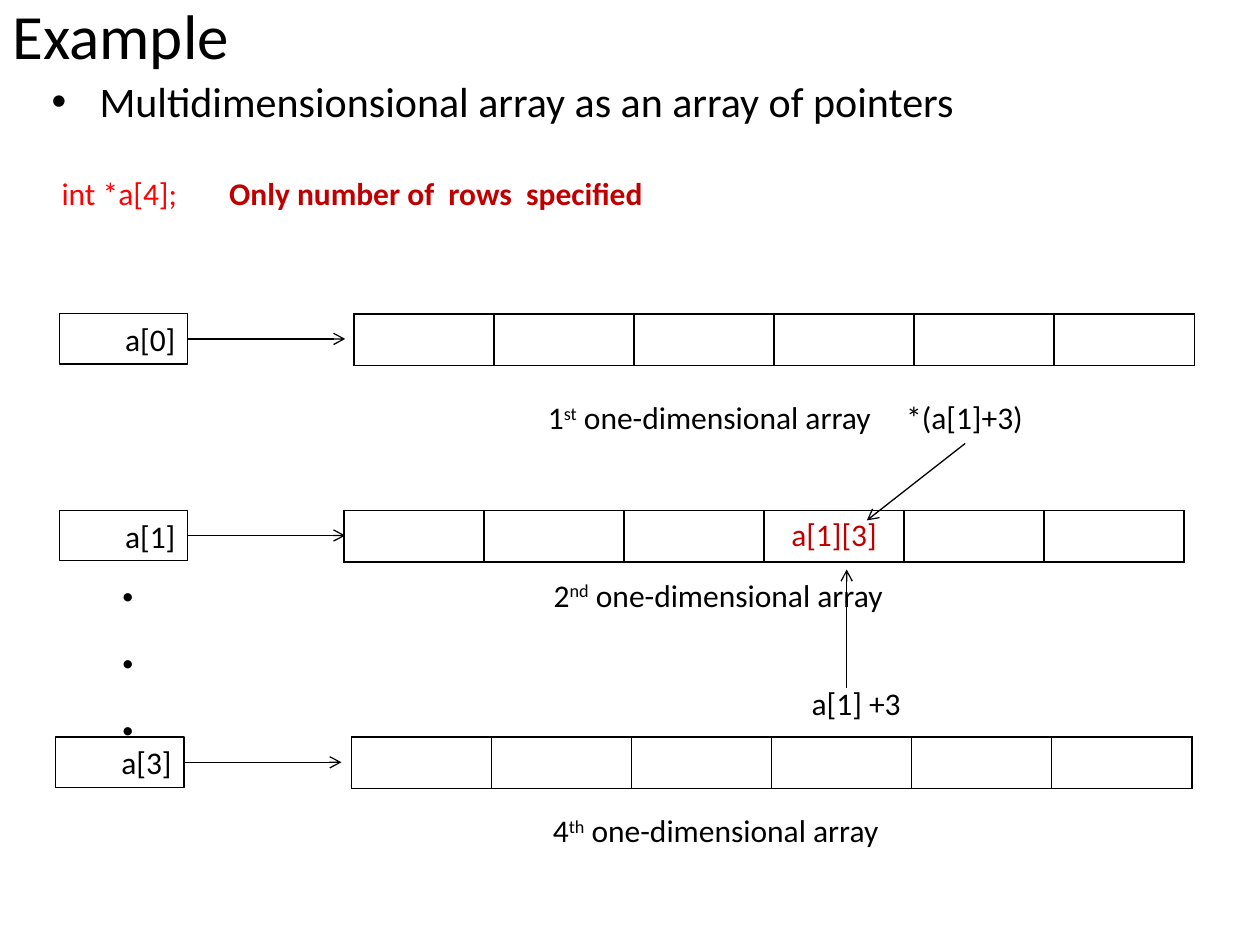
"""Build a slide showing a two-dimensional array as an array of pointers."""
from lxml.etree import SubElement
from pptx import Presentation
from pptx.dml.color import RGBColor
from pptx.enum.shapes import MSO_CONNECTOR, MSO_SHAPE
from pptx.enum.text import MSO_ANCHOR, MSO_AUTO_SIZE, PP_ALIGN
from pptx.oxml.ns import qn
from pptx.util import Inches, Pt

BLACK = RGBColor(0, 0, 0)
RED = RGBColor(0xFF, 0, 0)
DARK_RED = RGBColor(0xC0, 0, 0)

TITLE = "Example"
BULLET = "Multidimensionsional array as an array of pointers"
COLUMNS, TABLE_WIDTH, ROW_HEIGHT = 6, 6.67, 0.41
BOX_WIDTH, BOX_HEIGHT, ARROW_LENGTH = 1.02, 0.4, 1.25
CAPTION_WIDTH = 4.22

ARRAYS = [
    dict(name="a[0]", top=2.49, box_left=0.47, table_left=2.81, cells={},
         ordinal=("1", "st"), caption=(3.52, 3.11)),
    dict(name="a[1]", top=4.05, box_left=0.47, table_left=2.73, cells={3: "a[1][3]"},
         ordinal=("2", "nd"), caption=(3.59, 4.52)),
    dict(name="a[3]", top=5.85, box_left=0.44, table_left=2.79, cells={},
         ordinal=("4", "th"), caption=(3.57, 6.39)),
]
LABELS = [
    (["."] * 3, (0.78, 4.28, 0.47, 1.72), dict(size=32, bold=True, align=PP_ALIGN.CENTER)),
    (["a[1] +3"], (6.09, 5.38, 1.41, 0.4), dict(align=PP_ALIGN.CENTER)),
    (["*(a[1]+3)"], (6.95, 3.11, 1.41, 0.4), dict(align=PP_ALIGN.CENTER)),
    (["int *a[4];"], (0.39, 1.33, 1.13, 0.4), dict(color=RED, wrap=False)),
    (["Only number of  rows  specified"], (1.72, 1.33, 6.95, 0.4),
     dict(color=DARK_RED, bold=True)),
]
POINTERS = [((6.72, 5.46), (6.72, 4.52)), ((7.66, 3.52), (6.88, 4.13))]


def write(frame, paragraphs, size=18, color=BLACK, bold=False, align=PP_ALIGN.LEFT,
          wrap=True, fit=MSO_AUTO_SIZE.SHAPE_TO_FIT_TEXT):
    """Fill a frame; in a tuple paragraph every second span is superscript."""
    frame.word_wrap = wrap
    if fit is not None:
        frame.auto_size = fit
    for index, content in enumerate(paragraphs):
        para = frame.paragraphs[0] if index == 0 else frame.add_paragraph()
        para.alignment = align
        spans = content if isinstance(content, tuple) else (content,)
        for position, text in enumerate(spans):
            span = para.add_run()
            span.text = text
            span.font.name = "Calibri"
            span.font.size = Pt(size)
            span.font.bold = bold
            span.font.color.rgb = color
            if position % 2:
                span.font._element.set("baseline", "30000")


def place(shape, left, top, width, height):
    shape.left, shape.top = Inches(left), Inches(top)
    shape.width, shape.height = Inches(width), Inches(height)


def add_label(page, paragraphs, area, **style):
    box = page.shapes.add_textbox(*map(Inches, area))
    write(box.text_frame, paragraphs, **style)


def add_arrow(page, start, end):
    arrow = page.shapes.add_connector(MSO_CONNECTOR.STRAIGHT, *map(Inches, start + end))
    arrow.line.color.rgb = BLACK
    arrow.line.width = Pt(0.75)
    SubElement(arrow.line._get_or_add_ln(), qn("a:tailEnd"), type="arrow")
    SubElement(arrow._element.spPr, qn("a:effectLst"))
    return arrow


def add_borders(cell):
    properties = cell._tc.get_or_add_tcPr()
    for index, side in enumerate(("lnL", "lnR", "lnT", "lnB")):
        line = properties.makeelement(qn(f"a:{side}"), {"w": str(Pt(1))})
        fill = SubElement(line, qn("a:solidFill"))
        SubElement(fill, qn("a:srgbClr"), val=str(BLACK))
        properties.insert(index, line)


def add_row(page, left, top, texts):
    area = map(Inches, (left, top, TABLE_WIDTH, ROW_HEIGHT))
    table = page.shapes.add_table(1, COLUMNS, *area).table
    table.first_row = table.horz_banding = False
    for column in range(COLUMNS):
        cell = table.cell(0, column)
        cell.fill.background()
        add_borders(cell)
        if column in texts:
            write(cell.text_frame, [texts[column]], color=DARK_RED,
                  align=PP_ALIGN.CENTER, fit=None)


def add_array(page, name, top, box_left, table_left, cells, ordinal, caption):
    add_row(page, table_left, top, cells)
    area = map(Inches, (box_left, top, BOX_WIDTH, BOX_HEIGHT))
    box = page.shapes.add_shape(MSO_SHAPE.RECTANGLE, *area)
    box.shadow.inherit = False
    box.fill.background()
    box.line.color.rgb = BLACK
    box.line.width = Pt(0.75)
    write(box.text_frame, [name], align=PP_ALIGN.RIGHT)
    add_label(page, [(*ordinal, " one-dimensional array")],
              (*caption, CAPTION_WIDTH, BOX_HEIGHT), align=PP_ALIGN.CENTER)
    right, middle = box_left + BOX_WIDTH, top + BOX_HEIGHT / 2
    arrow = add_arrow(page, (right, middle), (right + ARROW_LENGTH, middle))
    arrow.begin_connect(box, 3)


def main():
    deck = Presentation()
    deck.slide_width, deck.slide_height = Inches(10), Inches(7.5)
    page = deck.slides.add_slide(deck.slide_layouts[1])

    title, body = page.placeholders
    place(title, 0, 0, 9, 0.55)
    title.text_frame.vertical_anchor = MSO_ANCHOR.MIDDLE
    write(title.text_frame, [TITLE], size=36, fit=MSO_AUTO_SIZE.NONE)
    place(body, 0.31, 0.55, 9.19, 6.72)
    write(body.text_frame, [BULLET], size=24, fit=MSO_AUTO_SIZE.NONE)
    bullet = body.text_frame.paragraphs[0]._p.get_or_add_pPr()
    bullet.set("marL", str(Inches(0.38)))
    bullet.set("indent", str(Inches(-0.38)))

    for array in ARRAYS:
        add_array(page, **array)
    for paragraphs, area, style in LABELS:
        add_label(page, paragraphs, area, **style)
    for start, end in POINTERS:
        add_arrow(page, start, end)
    deck.save("out.pptx")


if __name__ == "__main__":
    main()
